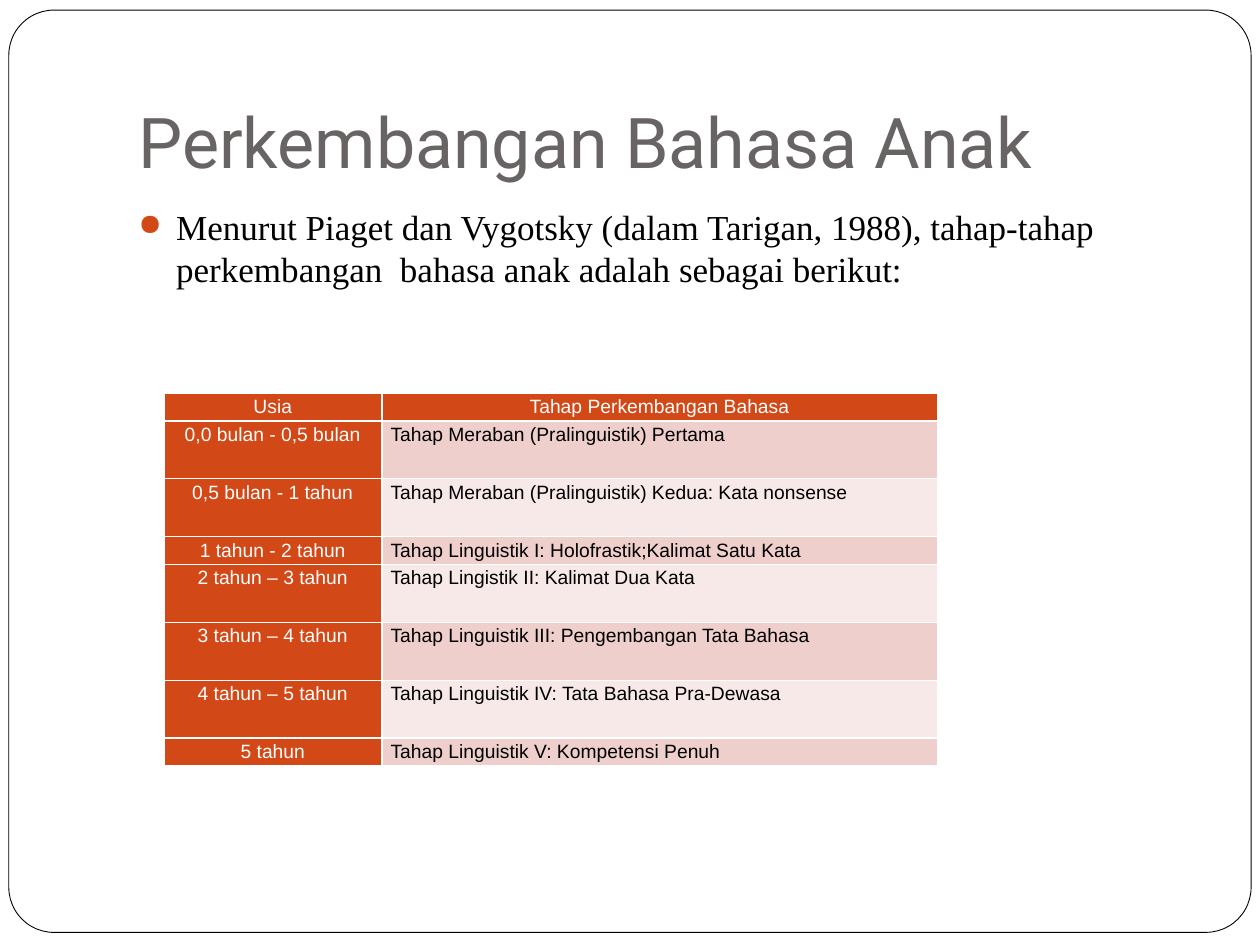
from dataclasses import dataclass

from lxml import etree
from pptx import Presentation
from pptx.dml.color import RGBColor
from pptx.enum.shapes import MSO_SHAPE
from pptx.enum.text import MSO_ANCHOR, PP_ALIGN
from pptx.oxml.ns import qn
from pptx.util import Inches, Pt

ROUNDED = MSO_SHAPE.ROUNDED_RECTANGLE
TOP, BOTTOM = MSO_ANCHOR.TOP, MSO_ANCHOR.BOTTOM
LEFT, CENTER = PP_ALIGN.LEFT, PP_ALIGN.CENTER
TITLE_ONLY = 5


@dataclass(frozen=True)
class Theme:
    accent: str = "D34817"
    band_dark: str = "EFCFCC"
    band_light: str = "F7E9E8"
    title: str = "696464"
    black: str = "000000"
    white: str = "FFFFFF"
    title_font: str = "Roboto"
    body_font: str = "Times New Roman"
    table_font: str = "Arial"
    title_size: int = 40
    body_size: int = 20
    table_size: int = 11


THEME = Theme()
HEADER = ("Usia", "Tahap Perkembangan Bahasa")
# Age, stage, row height in inches
STAGES = [
    ("0,0 bulan - 0,5 bulan", "Tahap Meraban (Pralinguistik) Pertama", 0.46),
    ("0,5 bulan - 1 tahun", "Tahap Meraban (Pralinguistik) Kedua: Kata nonsense", 0.46),
    ("1 tahun - 2 tahun", "Tahap Linguistik I: Holofrastik;Kalimat Satu Kata", 0.22),
    ("2 tahun – 3 tahun", "Tahap Lingistik II: Kalimat Dua Kata", 0.46),
    ("3 tahun – 4 tahun", "Tahap Linguistik III: Pengembangan Tata Bahasa", 0.46),
    ("4 tahun – 5 tahun", "Tahap Linguistik IV: Tata Bahasa Pra-Dewasa", 0.46),
    ("5 tahun", "Tahap Linguistik V: Kompetensi Penuh", 0.22),
]


def rgb(color):
    return RGBColor.from_string(color)


def add_run(p, text, font, size, color):
    r = p.add_run()
    r.text = text
    r.font.name = font
    r.font.size = Pt(size)
    r.font.bold = False
    r.font.color.rgb = rgb(color)


def add_frame(slide):
    sp = slide.shapes.add_shape(ROUNDED, Inches(0.07), Inches(0.08),
                                Inches(9.86), Inches(7.32))
    sp.adjustments[0] = 0.049
    sp.shadow.inherit = False
    sp.fill.solid()
    sp.fill.fore_color.rgb = rgb(THEME.white)
    sp.line.color.rgb = rgb(THEME.black)
    sp.line.width = Pt(0.5)
    # Send behind the title
    slide.shapes._spTree.insert(2, sp._element)


def set_title(slide, text):
    sp = slide.shapes.title
    sp.left, sp.top, sp.width, sp.height = (
        Inches(1), Inches(0.3), Inches(8.5), Inches(1.25))
    tf = sp.text_frame
    tf.vertical_anchor = BOTTOM
    tf.margin_bottom = Inches(0.1)
    p = tf.paragraphs[0]
    p.alignment = LEFT
    add_run(p, text, THEME.title_font, THEME.title_size, THEME.title)


def set_bullet(p, char, color, percent, indent):
    pPr = p._p.get_or_add_pPr()
    pPr.set("marL", str(indent))
    pPr.set("indent", str(-indent))
    bu_color = etree.SubElement(pPr, qn("a:buClr"))
    etree.SubElement(bu_color, qn("a:srgbClr"), val=color)
    etree.SubElement(pPr, qn("a:buSzPct"), val=str(percent * 1000))
    etree.SubElement(pPr, qn("a:buChar"), char=char)


def add_bullet_text(slide, text):
    sp = slide.shapes.add_textbox(Inches(1), Inches(1.58), Inches(8.5), Inches(5))
    tf = sp.text_frame
    tf.word_wrap = True
    p = tf.paragraphs[0]
    p.space_before = Pt(5.8)
    set_bullet(p, "●", THEME.accent, 85, Inches(0.3))
    add_run(p, text, THEME.body_font, THEME.body_size, THEME.black)


def set_borders(cell, color, width):
    tcPr = cell._tc.get_or_add_tcPr()
    for i, side in enumerate(("a:lnL", "a:lnR", "a:lnT", "a:lnB")):
        ln = etree.Element(qn(side), w=str(Pt(width)))
        fill = etree.SubElement(ln, qn("a:solidFill"))
        etree.SubElement(fill, qn("a:srgbClr"), val=color)
        tcPr.insert(i, ln)


def fill_cell(cell, text, fill, color, align):
    cell.margin_left = cell.margin_right = Inches(0.07)
    cell.margin_top = cell.margin_bottom = 0
    cell.vertical_anchor = TOP
    cell.fill.solid()
    cell.fill.fore_color.rgb = rgb(fill)
    set_borders(cell, THEME.white, 1)
    p = cell.text_frame.paragraphs[0]
    p.alignment = align
    p.line_spacing = 1.15
    add_run(p, text, THEME.table_font, THEME.table_size, color)


def add_stage_table(slide):
    heights = [0.22] + [height for _, _, height in STAGES]
    table = slide.shapes.add_table(len(heights), 2, Inches(1.3), Inches(3.12),
                                   Inches(6.14), Inches(sum(heights))).table
    for col, width in zip(table.columns, (1.73, 4.41)):
        col.width = Inches(width)
    for row, height in zip(table.rows, heights):
        row.height = Inches(height)

    # Header row
    for c, text in enumerate(HEADER):
        fill_cell(table.cell(0, c), text, THEME.accent, THEME.white, CENTER)
    # Ages on the accent colour, stages on alternating bands
    for i, (age, stage, _) in enumerate(STAGES, 1):
        band = THEME.band_dark if i % 2 else THEME.band_light
        fill_cell(table.cell(i, 0), age, THEME.accent, THEME.white, CENTER)
        fill_cell(table.cell(i, 1), stage, band, THEME.black, LEFT)


def main():
    prs = Presentation()
    prs.slide_width, prs.slide_height = Inches(10), Inches(7.5)
    slide = prs.slides.add_slide(prs.slide_layouts[TITLE_ONLY])
    add_frame(slide)
    set_title(slide, "Perkembangan Bahasa Anak")
    add_bullet_text(slide, "Menurut Piaget dan Vygotsky (dalam Tarigan, 1988), tahap-tahap "
                           "perkembangan  bahasa anak adalah sebagai berikut:")
    add_stage_table(slide)
    prs.save("out.pptx")


if __name__ == "__main__":
    main()
